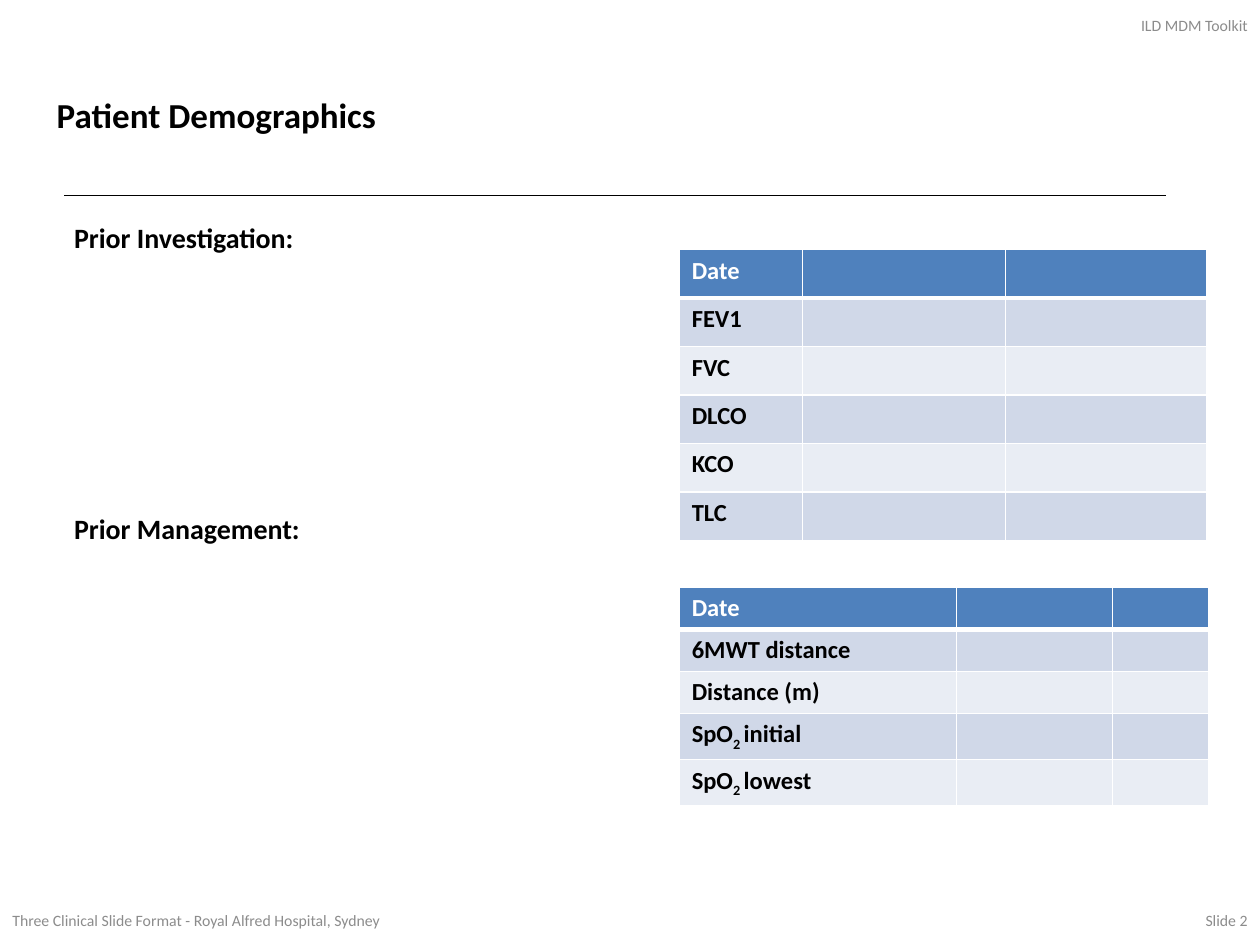
"""Build the patient demographics slide of a clinical meeting toolkit."""
from lxml import etree
from pptx import Presentation
from pptx.dml.color import RGBColor
from pptx.enum import shapes, text
from pptx.oxml import ns
from pptx.util import Inches, Pt

BLACK = RGBColor(0x00, 0x00, 0x00)
WHITE = RGBColor(0xFF, 0xFF, 0xFF)
GREY = RGBColor(0x8C, 0x8C, 0x8C)
HEADER_BLUE = RGBColor(0x4F, 0x81, 0xBD)
BANDS = (RGBColor(0xE9, 0xED, 0xF4), RGBColor(0xD0, 0xD8, 0xE8))
FONT = "Calibri"
SUBSCRIPT = "-25000"

LUNG_FUNCTION = ["Date", "FEV1", "FVC", "DLCO", "KCO", "TLC"]
WALK_TEST = ["Date", "6MWT distance", "Distance (m)",
             ("SpO", "2 ", "initial"), ("SpO", "2 ", "lowest")]


def style_run(run, size, color, bold=False):
    """Format one run of text."""
    run.font.name = FONT
    run.font.size = Pt(size)
    run.font.bold = bold
    run.font.color.rgb = color


def add_title(slide, wording):
    """Place and format the title placeholder."""
    title = slide.shapes.title
    title.left, title.top = Inches(0.35), Inches(0.13)
    title.width, title.height = Inches(9.24), Inches(1.55)
    frame = title.text_frame
    frame.text = wording
    frame.vertical_anchor = text.MSO_ANCHOR.MIDDLE
    paragraph = frame.paragraphs[0]
    paragraph.alignment = text.PP_ALIGN.LEFT
    style_run(paragraph.runs[0], 20, BLACK, bold=True)


def add_rule(slide, left, right, y):
    """Draw the thin horizontal rule below the title."""
    rule = slide.shapes.add_connector(
        shapes.MSO_CONNECTOR.STRAIGHT, Inches(left), Inches(y), Inches(right), Inches(y))
    rule.line.color.rgb = BLACK
    rule.line.width = Pt(0.75)
    etree.SubElement(rule._element.spPr, ns.qn("a:effectLst"))


def add_headings(slide, headings, gap):
    """Write the left-hand headings, set apart by a gap in points."""
    box = slide.shapes.add_textbox(Inches(0.49), Inches(1.75), Inches(4.58), Inches(5.31))
    frame = box.text_frame
    frame.word_wrap = True
    frame.text = "\n".join(headings)
    for index, paragraph in enumerate(frame.paragraphs):
        paragraph.line_spacing = 0.8
        paragraph.space_before = Pt(gap if index else 0)
        style_run(paragraph.runs[0], 16, BLACK, bold=True)


def add_margin_note(slide, wording, left, top, width, alignment):
    """Write a small grey note at the edge of the slide."""
    box = slide.shapes.add_textbox(Inches(left), Inches(top), Inches(width), Inches(0.4))
    frame = box.text_frame
    frame.word_wrap = True
    frame.vertical_anchor = text.MSO_ANCHOR.MIDDLE
    frame.text = wording
    paragraph = frame.paragraphs[0]
    paragraph.alignment = alignment
    style_run(paragraph.runs[0], 9, GREY)


def set_borders(cell, bottom):
    """Give a cell white borders, with its own bottom width in points."""
    properties = cell._tc.get_or_add_tcPr()
    for side, width in (("L", 1), ("R", 1), ("T", 1), ("B", bottom)):
        border = etree.SubElement(properties, ns.qn(f"a:ln{side}"), w=str(Pt(width)))
        fill = etree.SubElement(border, ns.qn("a:solidFill"))
        etree.SubElement(fill, ns.qn("a:srgbClr"), val=str(WHITE))


def write_label(cell, label, color):
    """Write a row label, whose second part, if any, is a subscript."""
    parts = (label,) if isinstance(label, str) else label
    for index, part in enumerate(parts):
        run = cell.text_frame.paragraphs[0].add_run()
        run.text = part
        style_run(run, 14, color, bold=True)
        if index == 1:
            run.font._element.set("baseline", SUBSCRIPT)


def add_results_table(slide, labels, top, widths, row_height):
    """Add a banded table with labels in its first column."""
    frame = slide.shapes.add_table(
        len(labels), len(widths), Inches(5.39), Inches(top),
        Inches(sum(widths)), Inches(row_height * len(labels)))
    table = frame.table
    for column, width in zip(table.columns, widths):
        column.width = Inches(width)
    for index, (row, label) in enumerate(zip(table.rows, labels)):
        row.height = Inches(row_height)
        for cell in row.cells:
            set_borders(cell, 1 if index else 3)
            cell.fill.solid()
            cell.fill.fore_color.rgb = BANDS[index % 2] if index else HEADER_BLUE
            end = cell.text_frame.paragraphs[0]._p.get_or_add_endParaRPr()
            end.set("sz", "1400")
        write_label(row.cells[0], label, BLACK if index else WHITE)


def main():
    """Build and save the slide."""
    deck = Presentation()
    deck.slide_width, deck.slide_height = Inches(10), Inches(7.5)
    slide = deck.slides.add_slide(deck.slide_layouts.get_by_name("Title Only"))
    add_title(slide, "Patient Demographics")
    add_headings(slide, ["Prior Investigation:", "Prior Management:"], gap=151)
    add_rule(slide, 0.51, 9.25, 1.55)
    add_results_table(slide, LUNG_FUNCTION, 1.98, (0.98, 1.61, 1.6), 0.385)
    add_results_table(slide, WALK_TEST, 4.66, (2.2, 1.24, 0.76), 0.33)
    add_margin_note(slide, "Three Clinical Slide Format - Royal Alfred Hospital, Sydney",
                    0, 7.1, 6.23, text.PP_ALIGN.LEFT)
    add_margin_note(slide, "ILD MDM Toolkit", 7.67, 0, 2.33, text.PP_ALIGN.RIGHT)
    add_margin_note(slide, "Slide 2", 8.81, 7.1, 1.19, text.PP_ALIGN.RIGHT)
    deck.save("out.pptx")


if __name__ == "__main__":
    main()
